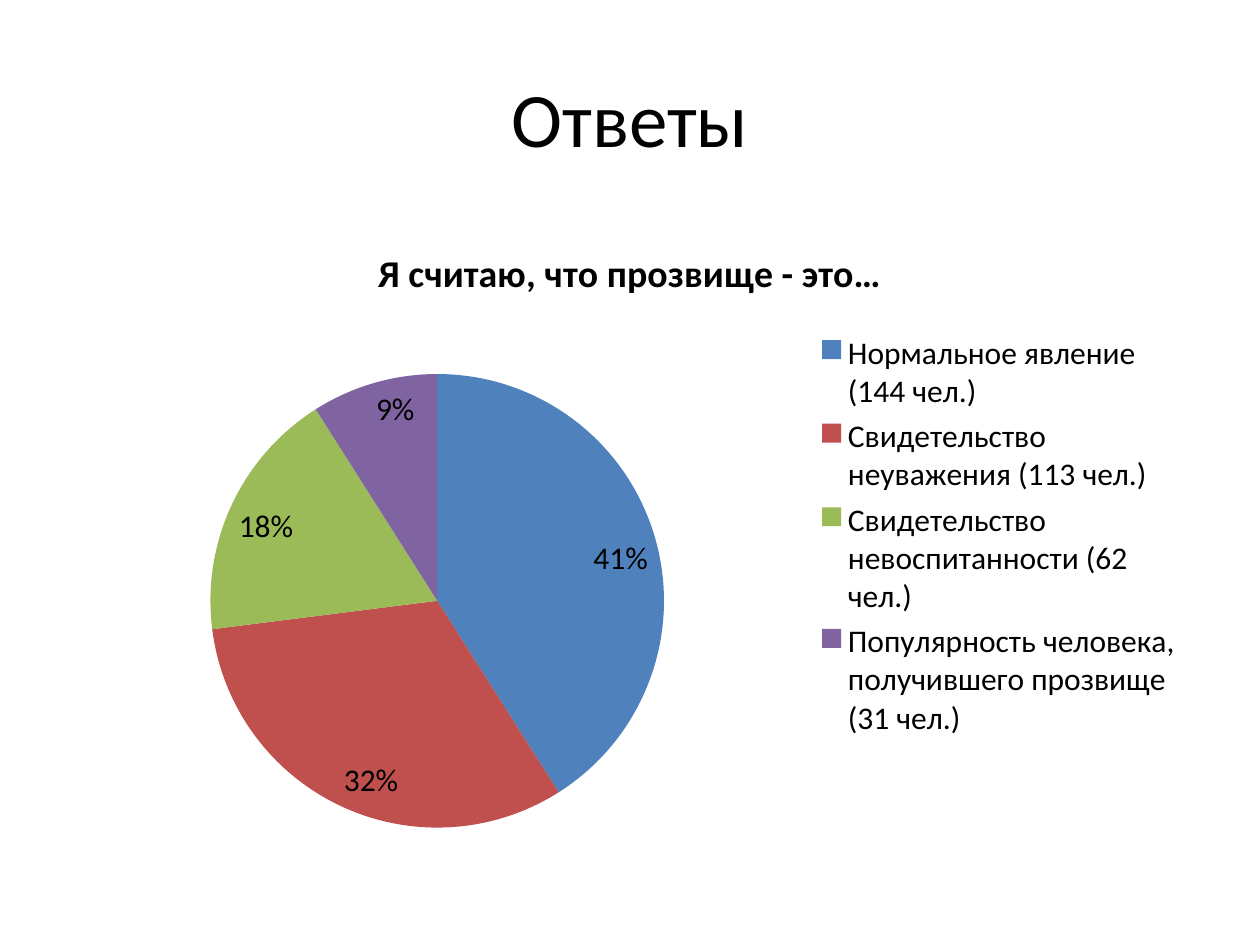
from lxml import etree
from pptx import Presentation
from pptx.chart.data import CategoryChartData
from pptx.dml.color import RGBColor
from pptx.enum.chart import XL_CHART_TYPE, XL_LABEL_POSITION, XL_LEGEND_POSITION
from pptx.enum.text import MSO_ANCHOR, PP_ALIGN
from pptx.oxml.ns import qn
from pptx.util import Inches, Pt

PIE = XL_CHART_TYPE.PIE
INSIDE_END = XL_LABEL_POSITION.INSIDE_END
LEGEND_RIGHT = XL_LEGEND_POSITION.RIGHT
MIDDLE = MSO_ANCHOR.MIDDLE
CENTER = PP_ALIGN.CENTER

WIDTH, HEIGHT = Inches(10), Inches(7.5)
FONT = "Calibri"
BLACK = "000000"
QUESTION = "Я считаю, что прозвище - это…"
ANSWERS = [
    ("Нормальное явление (144 чел.)", 41, "4F81BD"),
    ("Свидетельство неуважения (113 чел.)", 32, "C0504D"),
    ("Свидетельство невоспитанности (62 чел.)", 18, "9BBB59"),
    ("Популярность человека, получившего прозвище (31 чел.)", 9, "8064A2"),
]


def color(hex_string):
    return RGBColor.from_string(hex_string)


def box(left, top, width, height):
    """Turn shares of the slide's size into lengths."""
    return (int(left * WIDTH), int(top * HEIGHT),
            int(width * WIDTH), int(height * HEIGHT))


def format_font(font, size, bold=False, hex_string=BLACK):
    font.name = FONT
    font.size = Pt(size)
    font.bold = bold
    font.color.rgb = color(hex_string)


def write_text(text_frame, text, align=CENTER, **font_format):
    paragraph = text_frame.paragraphs[0]
    paragraph.alignment = align
    run = paragraph.add_run()
    run.text = text
    format_font(run.font, **font_format)


def add_title(slide, text, place):
    text_frame = slide.shapes.add_textbox(*place).text_frame
    text_frame.word_wrap = True
    text_frame.vertical_anchor = MIDDLE
    write_text(text_frame, text, size=44)


def set_layout(parent, following_tag, inner=False, **shares):
    """Place a chart part by x, y, w and h as shares of the chart."""
    for old_layout in parent.findall(qn("c:layout")):
        parent.remove(old_layout)
    layout = etree.Element(qn("c:layout"))
    manual = etree.SubElement(layout, qn("c:manualLayout"))
    settings = {"layoutTarget": "inner"} if inner else {}
    settings.update(xMode="edge", yMode="edge", **shares)
    for name, value in settings.items():
        etree.SubElement(manual, qn(f"c:{name}")).set("val", str(value))
    parent.find(qn(following_tag)).addprevious(layout)


def add_pie(slide, title, answers, place):
    names, values, colors = zip(*answers)
    data = CategoryChartData()
    data.categories = names
    data.add_series(title, values)
    chart = slide.shapes.add_chart(PIE, *place, data).chart
    format_font(chart.font, size=18)

    chart.has_title = True
    write_text(chart.chart_title.text_frame, title, size=21.6, bold=True)
    chart.chart_title.include_in_layout = False

    chart.has_legend = True
    chart.legend.position = LEGEND_RIGHT
    chart.legend.include_in_layout = False
    format_font(chart.legend.font, size=18)

    plot = chart.plots[0]
    plot.vary_by_categories = True
    for index, hex_string in enumerate(colors):
        fill = plot.series[0].points[index].format.fill
        fill.solid()
        fill.fore_color.rgb = color(hex_string)

    plot.has_data_labels = True
    labels = plot.data_labels
    labels.show_percentage = True
    labels.show_value = False
    labels.number_format = "0%"
    labels.number_format_is_linked = False
    labels.position = INSIDE_END
    format_font(labels.font, size=18)

    plot_area = chart.element.find(".//" + qn("c:plotArea"))
    set_layout(plot_area, "c:pieChart", inner=True, x=0.13, y=0.24, w=0.4, h=0.74)
    legend = chart.element.find(".//" + qn("c:legend"))
    set_layout(legend, "c:overlay", x=0.66, y=0.17, w=0.33, h=0.67)


def main():
    presentation = Presentation()
    presentation.slide_width, presentation.slide_height = WIDTH, HEIGHT
    slide = presentation.slides.add_slide(presentation.slide_layouts[6])
    add_title(slide, "Ответы", box(0.05, 0.04, 0.9, 1 / 6))
    add_pie(slide, QUESTION, ANSWERS, box(0.05, 0.7 / 3, 0.9, 0.66))
    presentation.save("out.pptx")


if __name__ == "__main__":
    main()
